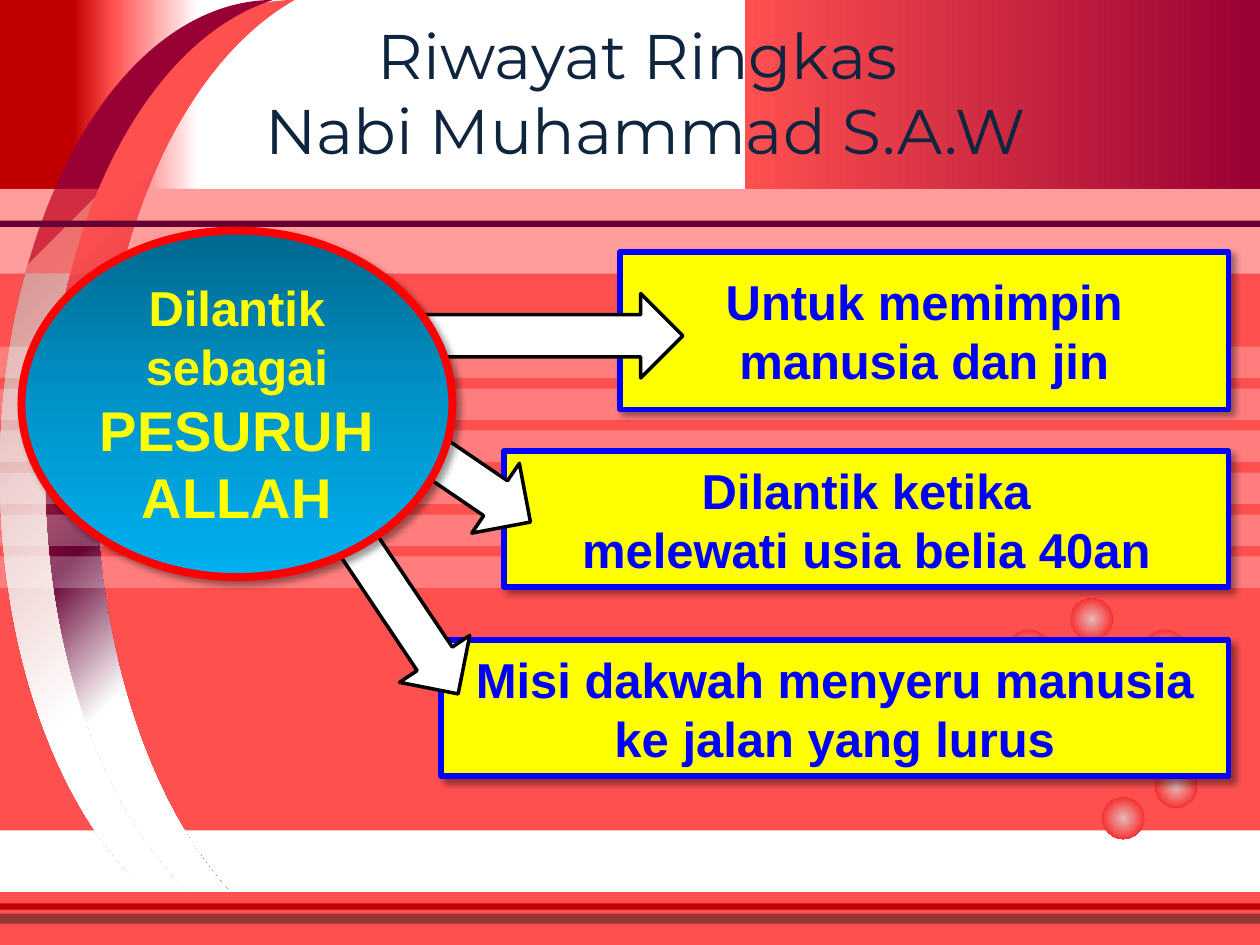
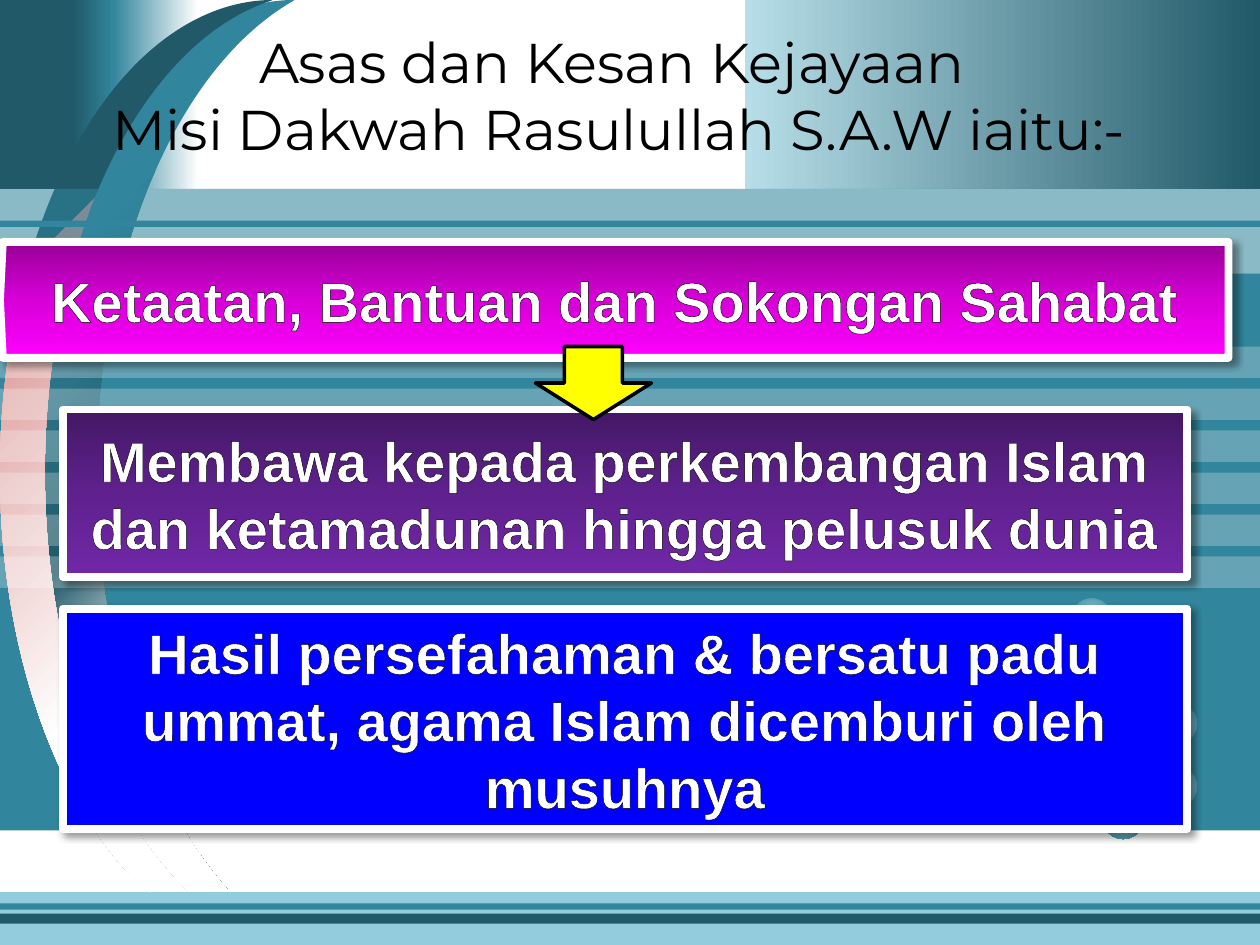
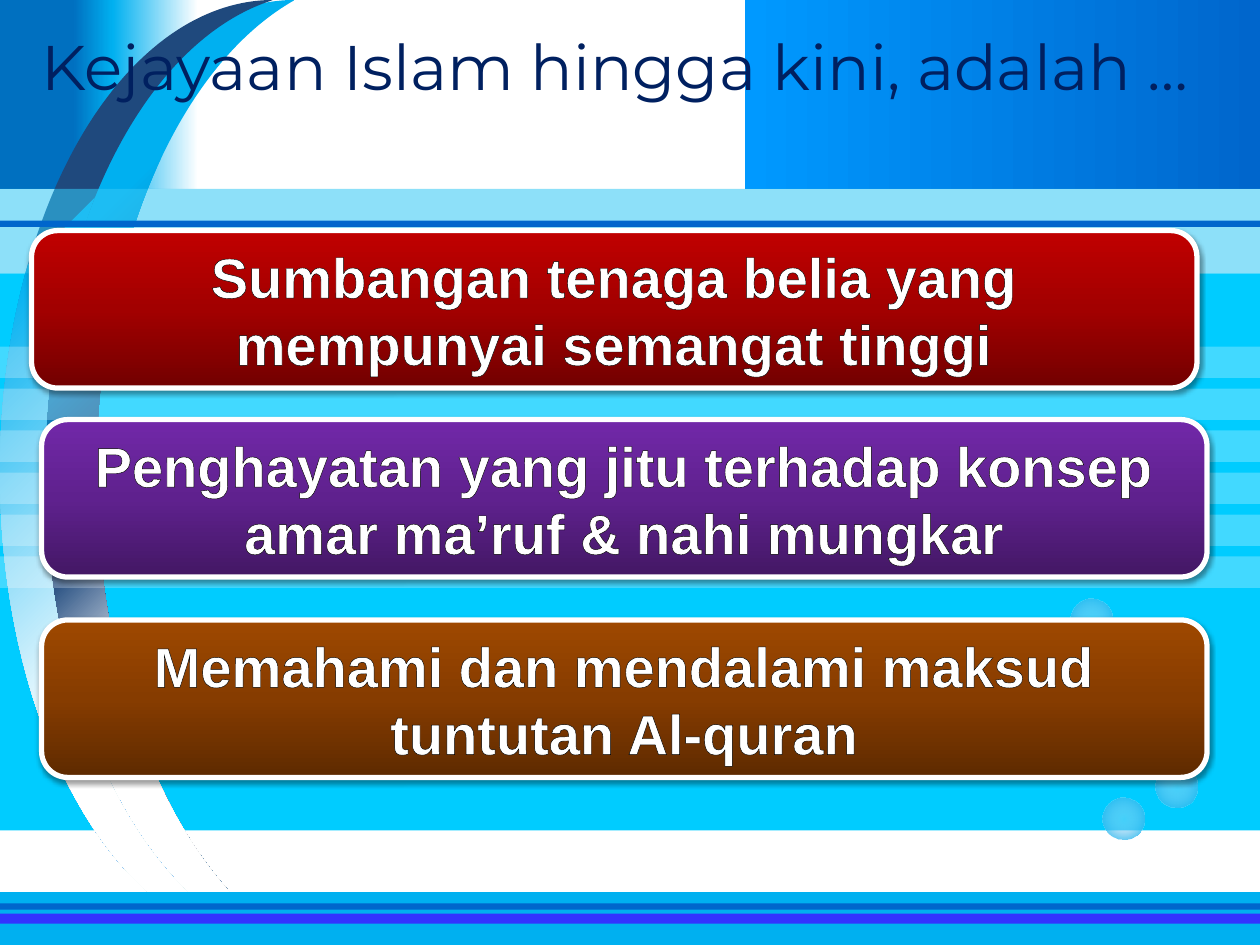
"""Build three themed slides about the mission of the Prophet."""
import dataclasses
import typing

import lxml.etree
import pptx
import pptx.dml.color
import pptx.enum.shapes
import pptx.enum.text
import pptx.oxml.ns
import pptx.util

Inches = pptx.util.Inches
Pt = pptx.util.Pt
Kind = pptx.enum.shapes.MSO_SHAPE
WHITE, BLACK, BLUE, YELLOW = "FFFFFF", "000000", "0000FF", "FFFF00"


class Stop(typing.NamedTuple):
    """One colour stop; position and opacity are percentages."""
    position: int
    color: str
    opacity: int = 100


class Tint(typing.NamedTuple):
    """A translucent solid colour."""
    color: str
    opacity: int


class Gradient(typing.NamedTuple):
    """A linear gradient, or a radial one when angle is None."""
    stops: tuple[Stop, ...]
    angle: int | None = 0


Paint = str | Tint | Gradient


class Shadow(typing.NamedTuple):
    """An outer shadow of black."""
    opacity: int
    blur: float
    distance: float
    angle: int


class Border(typing.NamedTuple):
    """An outline colour and its width in points."""
    color: str
    width: float


class Place(typing.NamedTuple):
    """Left, top, width and height in inches."""
    left: float
    top: float
    width: float
    height: float


@dataclasses.dataclass(frozen=True)
class Figure:
    """A preset shape with its look."""
    place: Place
    paint: Paint
    kind: Kind = Kind.RECTANGLE
    border: Border | None = None
    shadow: Shadow | None = None
    rotation: float = 0
    flipped: bool = False
    adjustment: float | None = None


@dataclasses.dataclass(frozen=True)
class Theme:
    """The colours that set one slide's backdrop apart."""
    field: str
    header: tuple[str, str]
    corner: str
    accent: str
    crescent: str
    edge: tuple[str, str]
    veil: str
    rule: str
    footer: tuple[str, str, str]
    bubble: tuple[Stop, Stop]
    bubbles: tuple[tuple[float, float], ...]


SIDE_SHADOW = Shadow(40, 4, 3, 45)
LOW_SHADOW = Shadow(38, 3.1, 1.6, 90)
BUBBLES = ((9.08, 5), (8.5, 4.75), (8, 5), (8.75, 6.33), (9.17, 6.08))
MORE_BUBBLES = BUBBLES + ((8.67, 5.25), (8.25, 5.5), (9.17, 5.58), (8.67, 5.75))

RED = Theme(
    field="FF5050", header=("FF5050", "990033"), corner="C00000", accent="FF5050",
    crescent="660033", edge=("990033", "D99694"), veil="FF5050", rule="660033",
    footer=("FF5050", "C00000", "953735"),
    bubble=(Stop(0, "E6B9B8"), Stop(100, "FF0000")), bubbles=BUBBLES)
TEAL = Theme(
    field="31859C", header=("B7DEE8", "215968"), corner="215968", accent="31859C",
    crescent="215968", edge=("215968", "D99694"), veil="31859C", rule="31859C",
    footer=("93CDDD", "31859C", "215968"),
    bubble=(Stop(0, "B7DEE8"), Stop(100, "31859C")), bubbles=MORE_BUBBLES)
SKY = Theme(
    field="00CCFF", header=("0099FF", "0066CC"), corner="0070C0", accent="00B0F0",
    crescent="1F497D", edge=("1F497D", "00B0F0"), veil="34C8F6", rule="0066CC",
    footer=("00B0F0", "0066CC", "3333FF"),
    bubble=(Stop(0, "C6D9F1", 34), Stop(100, "00B0F0")), bubbles=MORE_BUBBLES)


def rgb(color: str) -> pptx.dml.color.RGBColor:
    """Turn a hex string into a colour."""
    return pptx.dml.color.RGBColor.from_string(color)


def node(parent: typing.Any, tag: str, **attributes: object) -> typing.Any:
    """Append a DrawingML element to its parent."""
    values = {name: str(value) for name, value in attributes.items()}
    return lxml.etree.SubElement(parent, pptx.oxml.ns.qn(f"a:{tag}"), values)


def color_node(parent: typing.Any, color: str, opacity: int = 100) -> None:
    """Append a colour element with its opacity."""
    child = node(parent, "srgbClr", val=rgb(color))
    if opacity < 100:
        node(child, "alpha", val=opacity * 1000)


def ramp(*stops: tuple, angle: int | None = 0) -> Gradient:
    """Make a gradient from plain stop tuples."""
    return Gradient(tuple(Stop(*stop) for stop in stops), angle)


def shade(start: str, middle: str, end: str, angle: int) -> Gradient:
    """Make an even gradient of three colours."""
    return ramp((0, start), (50, middle), (100, end), angle=angle)


def fill(box: typing.Any, paint: Paint) -> None:
    """Fill a shape with a solid, translucent or gradient paint."""
    properties = box.element.spPr
    if isinstance(paint, Gradient):
        box.fill.gradient()
        gradient = properties.find(pptx.oxml.ns.qn("a:gradFill"))
        for child in list(gradient):
            gradient.remove(child)
        gradient.set("rotWithShape", "1")
        stop_list = node(gradient, "gsLst")
        for stop in paint.stops:
            color_node(node(stop_list, "gs", pos=stop.position * 1000), stop.color, stop.opacity)
        if paint.angle is None:
            circle = node(gradient, "path", path="circle")
            node(circle, "fillToRect", l=50000, t=50000, r=50000, b=50000)
        else:
            node(gradient, "lin", ang=paint.angle * 60000, scaled=0)
        return
    box.fill.solid()
    box.fill.fore_color.rgb = rgb(paint if isinstance(paint, str) else paint.color)
    if isinstance(paint, Tint):
        solid = properties.find(pptx.oxml.ns.qn("a:solidFill"))
        node(solid[0], "alpha", val=paint.opacity * 1000)


def draw(shapes: typing.Any, figure: Figure) -> typing.Any:
    """Draw one figure and return its shape."""
    box = shapes.add_shape(figure.kind, *map(Inches, figure.place))
    box.rotation = figure.rotation
    if figure.adjustment is not None:
        box.adjustments[0] = figure.adjustment
    if figure.flipped:
        box.element.spPr.find(pptx.oxml.ns.qn("a:xfrm")).set("flipH", "1")
    fill(box, figure.paint)
    if figure.border:
        box.line.color.rgb = rgb(figure.border.color)
        box.line.width = Pt(figure.border.width)
    else:
        box.line.fill.background()
    box.shadow.inherit = False
    if figure.shadow:
        effects = box.element.spPr.find(pptx.oxml.ns.qn("a:effectLst"))
        outer = node(effects, "outerShdw", blurRad=Pt(figure.shadow.blur),
                     dist=Pt(figure.shadow.distance), dir=figure.shadow.angle * 60000,
                     rotWithShape=0)
        color_node(outer, BLACK, figure.shadow.opacity)
    return box


def add_span(para: typing.Any, text: str, *, size: float, color: str, font: str = "Arial",
             bold: bool = True, outline: str | None = None) -> None:
    """Add formatted text to a centred paragraph."""
    para.alignment = pptx.enum.text.PP_ALIGN.CENTER
    span = para.add_run()
    span.text = text
    span.font.name, span.font.size, span.font.bold = font, Pt(size), bold
    span.font.color.rgb = rgb(color)
    if outline:
        properties = span.font._element
        line = node(properties, "ln", w=Pt(0.75))
        color_node(node(line, "solidFill"), outline)
        properties.insert(0, line)


def write(box: typing.Any, *lines: str, **style: typing.Any) -> None:
    """Write one paragraph per line in a shape."""
    frame = box.text_frame
    for index, line in enumerate(lines):
        para = frame.add_paragraph() if index else frame.paragraphs[0]
        add_span(para, line, **style)


def label(page: typing.Any, figure: Figure, *lines: str, **style: typing.Any) -> typing.Any:
    """Draw a figure with wrapped text in its middle."""
    box = draw(page.shapes, figure)
    box.text_frame.word_wrap = True
    box.text_frame.vertical_anchor = pptx.enum.text.MSO_ANCHOR.MIDDLE
    write(box, *lines, **style)
    return box


def add_title(page: typing.Any, place: Place, *lines: str, size: float, color: str,
              wrap: bool = True) -> None:
    """Write the slide title."""
    box = page.shapes.add_textbox(*map(Inches, place))
    box.text_frame.word_wrap = wrap
    box.text_frame.auto_size = pptx.enum.text.MSO_AUTO_SIZE.SHAPE_TO_FIT_TEXT
    write(box, *lines, size=size, color=color, font="Montserrat", bold=False, outline=WHITE)


def band(top: float, height: float, paint: Paint) -> Figure:
    """Describe a band across the whole slide."""
    return Figure(Place(0, top, 10, height), paint)


def backdrop(theme: Theme) -> list[Figure]:
    """List the backdrop's figures from back to front."""
    header = ramp((50, WHITE), (50, theme.header[0]), (100, theme.header[1]))
    corner = ramp((24, theme.corner), (37, theme.accent), (65, WHITE))
    crescent = ramp((24, theme.accent), (50, theme.crescent), (65, WHITE), angle=45)
    edge = ramp((24, theme.edge[0]), (24, theme.edge[1]), (65, WHITE), angle=45)
    stripes = [band(2.75 + index / 3, 0.25, Tint(WHITE, 26)) for index in range(6)]
    footer = [band(top, height, color) for (top, height), color
              in zip(((7.08, 0.42), (7.17, 0.05), (7.25, 0.08)), theme.footer)]
    bubbles = [Figure(Place(left, top, 0.33, 0.33), Gradient(theme.bubble, None),
                      Kind.FLOWCHART_CONNECTOR) for left, top in theme.bubbles]
    return [
        band(2.17, 4.42, theme.field),
        Figure(Place(1.83, 0, 8.17, 1.5), header),
        Figure(Place(0, 0, 2.42, 1.5), corner),
        Figure(Place(0.17, 0, 2.17, 7.5), crescent, Kind.MOON, adjustment=0.274),
        Figure(Place(0, 0, 2.17, 7.5), edge, Kind.MOON, adjustment=0.164),
        band(1.5, 0.67, Tint(theme.veil, 56)),
        band(1.75, 0.05, theme.rule),
        *stripes, *footer, *bubbles,
    ]


def add_page(deck: typing.Any, theme: Theme) -> typing.Any:
    """Add a blank slide with its themed backdrop."""
    page = deck.slides.add_slide(deck.slide_layouts[6])
    group = page.shapes.add_group_shape()
    for figure in backdrop(theme):
        draw(group.shapes, figure)
    return page


def add_appointment(deck: typing.Any) -> None:
    """Build the slide on the appointment as messenger."""
    page = add_page(deck, RED)
    add_title(page, Place(1.84, 0.08, 6.57, 1.31), "Riwayat Ringkas ", "Nabi Muhammad S.A.W",
              size=36, color="0F243E", wrap=False)
    points = (
        (Place(4.92, 2, 4.83, 1.25), ("Untuk memimpin manusia dan jin",)),
        (Place(4, 3.58, 5.75, 1.08), ("Dilantik ketika", "melewati usia belia 40an")),
        (Place(3.5, 5.08, 6.25, 1.08), ("Misi dakwah menyeru manusia ke jalan yang lurus",)),
    )
    for place, lines in points:
        label(page, Figure(place, YELLOW, border=Border(BLUE, 3), shadow=SIDE_SHADOW),
              *lines, size=28, color=BLUE)
    arrows = ((Place(3, 2.33, 2.42, 0.67), 0), (Place(2.53, 3.29, 1.84, 0.67), 34.3),
              (Place(1.59, 4.08, 2.63, 0.67), 56.2))
    for place, rotation in arrows:
        draw(page.shapes, Figure(place, WHITE, Kind.RIGHT_ARROW, Border(BLACK, 2),
                                 rotation=rotation))
    messenger = Figure(Place(0.17, 1.83, 3.42, 2.75), shade("00688E", "0094CA", "00B0F0", 90),
                       Kind.OVAL, Border("FF0000", 4.5), SIDE_SHADOW)
    box = label(page, messenger, "Dilantik sebagai ", size=28, color=YELLOW, outline=BLACK)
    add_span(box.text_frame.paragraphs[0], "PESURUH ALLAH", size=32, color=YELLOW, outline=BLACK)


def add_foundations(deck: typing.Any) -> None:
    """Build the slide on the mission's foundations and effects."""
    page = add_page(deck, TEAL)
    add_title(page, Place(0.25, 0.17, 9.33, 1.18), "Asas dan Kesan Kejayaan ",
              "Misi Dakwah Rasulullah S.A.W iaitu:-", size=32, color=BLACK)
    effects = (
        (Place(0, 1.92, 9.75, 0.92), shade("970097", "D700D7", "FF00FF", 90), 0.024,
         "Ketaatan, Bantuan dan Sokongan Sahabat"),
        (Place(0.5, 3.25, 8.92, 1.33), shade("431764", "5F218E", "7128A8", 90), 0,
         "Membawa kepada perkembangan Islam dan ketamadunan hingga pelusuk dunia"),
        (Place(0.5, 4.83, 8.92, 1.75), BLUE, 0,
         "Hasil persefahaman & bersatu padu ummat, agama Islam dicemburi oleh musuhnya"),
    )
    for place, paint, adjustment, text in effects:
        plate = Figure(place, paint, Kind.PENTAGON, Border(WHITE, 4.5), SIDE_SHADOW,
                       flipped=True, adjustment=adjustment)
        label(page, plate, text, size=32, color=WHITE, outline=BLACK)
    draw(page.shapes, Figure(Place(4.25, 2.75, 0.92, 0.58), YELLOW, Kind.DOWN_ARROW,
                             Border(BLACK, 2)))


def add_success(deck: typing.Any) -> None:
    """Build the slide on the reasons for success until today."""
    page = add_page(deck, SKY)
    add_title(page, Place(0.17, 0.17, 9.42, 1.31), "Kejayaan Islam hingga kini, adalah …",
              size=36, color="002060")
    reasons = (
        (0.25, 1.83, ("720000", "A20000", "C00000"),
         "Sumbangan tenaga belia yang mempunyai semangat tinggi"),
        (0.33, 3.33, ("431764", "5F218E", "7128A8"),
         "Penghayatan yang jitu terhadap konsep amar ma’ruf & nahi mungkar"),
        (0.33, 4.92, ("5E2A00", "863C00", "9E4800"),
         "Memahami dan mendalami maksud tuntutan Al-quran"),
    )
    for left, top, colors, text in reasons:
        card = Figure(Place(left, top, 9.25, 1.25), shade(*colors, angle=270),
                      Kind.ROUNDED_RECTANGLE, Border(WHITE, 3), LOW_SHADOW)
        label(page, card, text, size=32, color=WHITE, outline=BLACK)


def main() -> None:
    """Build and save the deck."""
    deck = pptx.Presentation()
    deck.slide_width, deck.slide_height = Inches(10), Inches(7.5)
    add_appointment(deck)
    add_foundations(deck)
    add_success(deck)
    deck.save("out.pptx")


if __name__ == "__main__":
    main()
